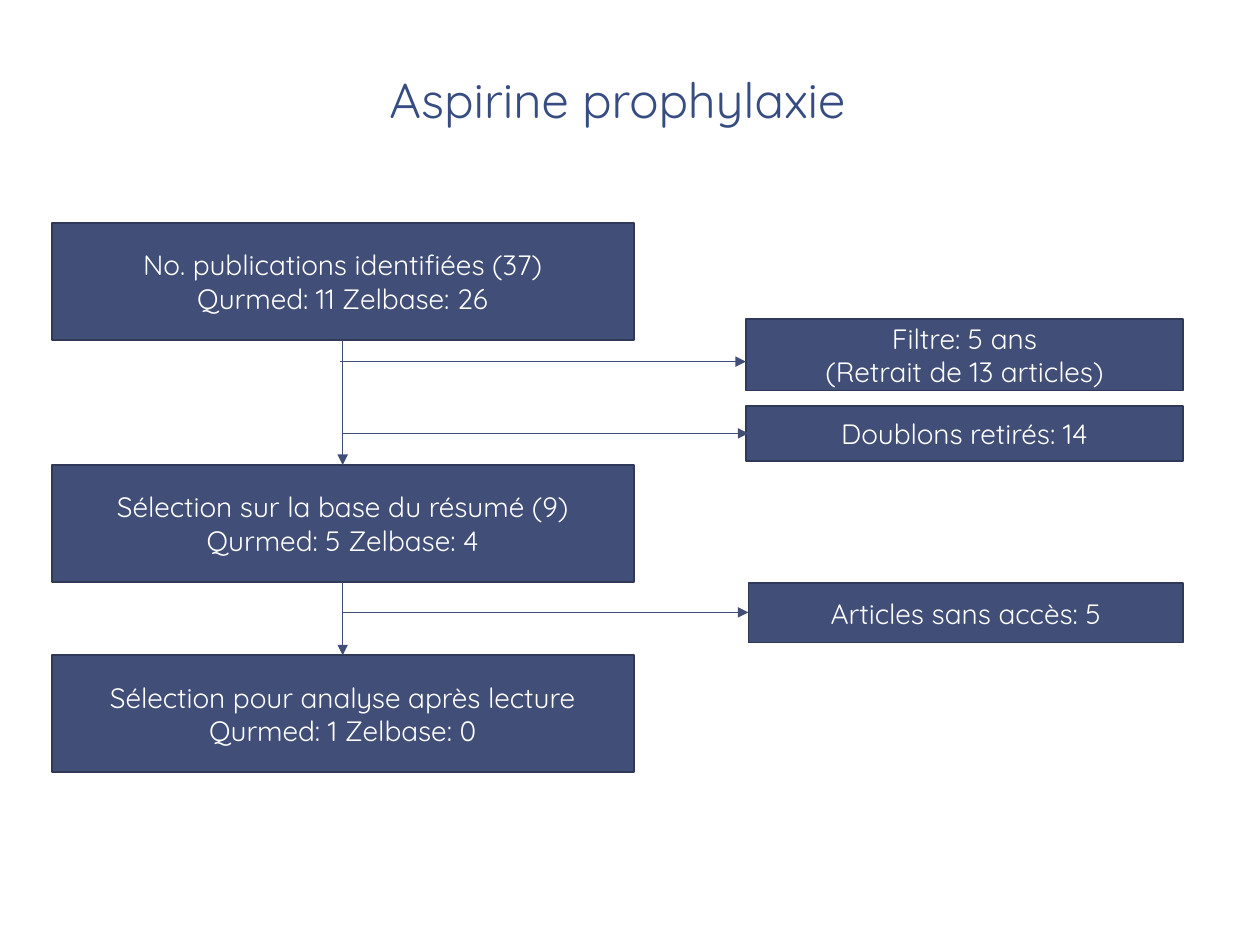
from dataclasses import dataclass

from lxml import etree
from pptx import Presentation
from pptx.dml.color import RGBColor
from pptx.enum.shapes import MSO_CONNECTOR, MSO_SHAPE
from pptx.enum.text import MSO_ANCHOR, MSO_AUTO_SIZE, PP_ALIGN
from pptx.oxml.ns import qn
from pptx.slide import Slide
from pptx.text.text import TextFrame
from pptx.util import Inches, Pt

PROCESS = MSO_SHAPE.FLOWCHART_PROCESS
STRAIGHT = MSO_CONNECTOR.STRAIGHT
CENTER = PP_ALIGN.CENTER
MIDDLE, TOP = MSO_ANCHOR.MIDDLE, MSO_ANCHOR.TOP

NAVY = RGBColor(0x41, 0x4E, 0x77)
BORDER = RGBColor(0x30, 0x3A, 0x58)
TITLE_BLUE = RGBColor(0x37, 0x4C, 0x81)
WHITE = RGBColor(0xFF, 0xFF, 0xFF)
FONT = "Quicksand"

STAGE_LEFT, STAGE_WIDTH, STAGE_HEIGHT = 0.41, 4.62, 0.93
STEM_X = STAGE_LEFT + STAGE_WIDTH / 2
EXCLUSION_RIGHT = 9.39


@dataclass(frozen=True)
class Stage:
    top: float
    lines: tuple[str, ...]


@dataclass(frozen=True)
class Exclusion:
    left: float
    top: float
    height: float
    lines: tuple[str, ...]
    branch_start: float
    branch_end: float
    branch_y: float


STAGES = (
    Stage(1.77, ("No. publications identifiées (37)", "Qurmed: 11 Zelbase: 26")),
    Stage(3.69, ("Sélection sur la base du résumé (9)", "Qurmed: 5 Zelbase: 4")),
    Stage(5.2, ("Sélection pour analyse après lecture", "Qurmed: 1 Zelbase: 0")),
)
EXCLUSIONS = (
    Exclusion(5.92, 2.53, 0.57, ("Filtre: 5 ans", "(Retrait de 13 articles)"),
              2.7, 5.92, 2.87),
    Exclusion(5.92, 3.22, 0.44, ("Doublons retirés: 14",), STEM_X, 5.94, 3.44),
    Exclusion(5.94, 4.63, 0.47, ("Articles sans accès: 5",), STEM_X, 5.94, 4.86),
)


def write_lines(frame: TextFrame, lines: tuple[str, ...], size: float,
                color: RGBColor) -> None:
    for index, line in enumerate(lines):
        paragraph = frame.paragraphs[0] if index == 0 else frame.add_paragraph()
        paragraph.alignment = CENTER
        run = paragraph.add_run()
        run.text = line
        run.font.name = FONT
        run.font.size = Pt(size)
        run.font.color.rgb = color


def draw_box(slide: Slide, left: float, top: float, width: float, height: float,
             lines: tuple[str, ...]) -> None:
    box = slide.shapes.add_shape(PROCESS, Inches(left), Inches(top),
                                 Inches(width), Inches(height))
    box.shadow.inherit = False
    box.fill.solid()
    box.fill.fore_color.rgb = NAVY
    box.line.color.rgb = BORDER
    box.line.width = Pt(1)
    box.text_frame.word_wrap = True
    box.text_frame.vertical_anchor = MIDDLE
    write_lines(box.text_frame, lines, 16, WHITE)


def draw_arrow(slide: Slide, x1: float, y1: float, x2: float, y2: float) -> None:
    arrow = slide.shapes.add_connector(STRAIGHT, Inches(x1), Inches(y1),
                                       Inches(x2), Inches(y2))
    arrow.line.color.rgb = NAVY
    arrow.line.width = Pt(0.5)
    etree.SubElement(arrow.line._get_or_add_ln(), qn("a:tailEnd"), type="triangle")
    etree.SubElement(arrow._element.spPr, qn("a:effectLst"))


def main() -> None:
    presentation = Presentation()
    presentation.slide_width = Inches(10)
    presentation.slide_height = Inches(7.5)
    slide = presentation.slides.add_slide(presentation.slide_layouts[5])

    # Title
    title = slide.shapes.title
    title.left, title.top = Inches(2.7), Inches(0.5)
    title.width, title.height = Inches(4.4), Inches(0.57)
    title.text_frame.word_wrap = True
    title.text_frame.auto_size = MSO_AUTO_SIZE.SHAPE_TO_FIT_TEXT
    title.text_frame.vertical_anchor = TOP
    write_lines(title.text_frame, ("Aspirine prophylaxie",), 28, TITLE_BLUE)

    # Selection stages, each leading down to the next
    for stage in STAGES:
        draw_box(slide, STAGE_LEFT, stage.top, STAGE_WIDTH, STAGE_HEIGHT, stage.lines)
    for upper, lower in zip(STAGES, STAGES[1:]):
        draw_arrow(slide, STEM_X, upper.top + STAGE_HEIGHT, STEM_X, lower.top)

    # Excluded articles, branching off to the right
    for exclusion in EXCLUSIONS:
        draw_box(slide, exclusion.left, exclusion.top,
                 EXCLUSION_RIGHT - exclusion.left, exclusion.height, exclusion.lines)
        draw_arrow(slide, exclusion.branch_start, exclusion.branch_y,
                   exclusion.branch_end, exclusion.branch_y)

    presentation.save("out.pptx")


if __name__ == "__main__":
    main()
